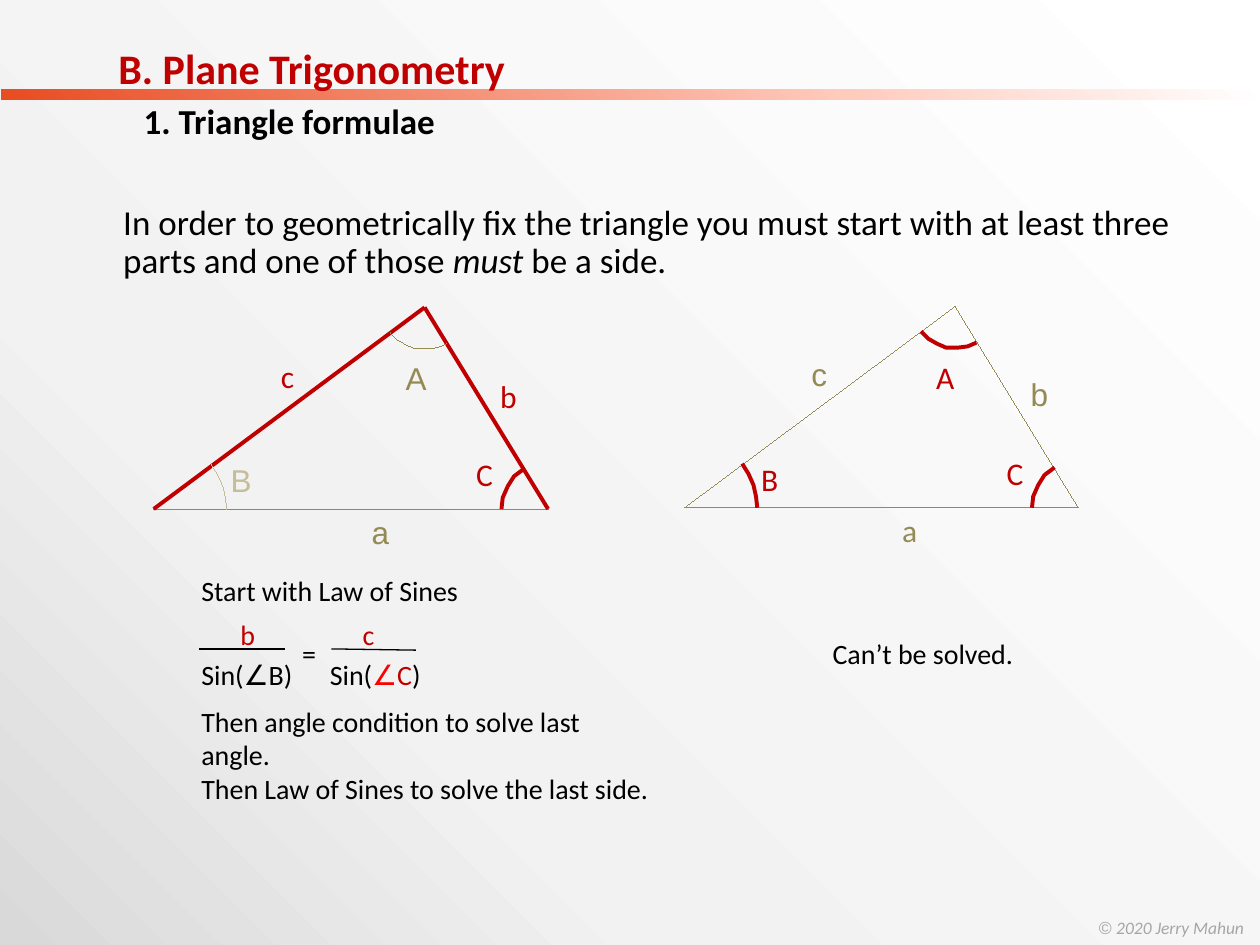
from pptx import Presentation
from pptx import util as u
from pptx.dml.color import RGBColor
from pptx.enum import shapes, text
from pptx.oxml import parse_xml
from pptx.oxml.ns import nsdecls, qn

THEME = {
    "red": "C00000", "bright": "FF0000", "black": "000000", "olive": "948A54",
    "pale": "C4BD97", "gray": "A6A6A6",
    "main": "Calibri", "alt": "Arial",
    "title": 24, "body": 20, "label": 18, "note": 16, "footer": 10,
    "bold_line": 2.25, "rule": 0.75, "hairline": 0,
}
BACKGROUND = [(0, "FFFFFF"), (70, "F2F2F2"), (100, "D9D9D9")]
BAR = [(0, "FFFFFF"), (33, "FFCBBD"), (100, "E84C22")]

# Paragraphs are lists of runs: (words, format changes)
TITLE = [[("B. Plane Trigonometry", {"size": "title", "color": "red", "bold": True})],
         [("1. Triangle formulae", {"size": "body", "bold": True})]]
INTRO = [[("In order to geometrically fix the triangle you must start with at least "
           "three parts and one of those ", {"size": "body"}),
          ("must", {"size": "body", "italic": True}),
          (" be a side.", {"size": "body"})]]
FOOTER = [[("© ", {"size": "footer", "color": "gray", "font": "alt", "italic": True}),
           ("2020 Jerry Mahun", {"size": "footer", "color": "gray", "italic": True})]]

# Notes and formula parts: box, wrap, tab stop, paragraphs
NOTES = [
    ((6.51, 5, 1.81, 0.37), False, None, [[("Can’t be solved.", {})]]),
    ((1.5, 4.5, 2.48, 0.37), False, None, [[("Start with Law of Sines", {})]]),
    ((1.5, 5.54, 3.78, 1.18), True, None, [
        [("Then angle condition to solve last angle.", {})],
        [("Then Law of Sines to solve the last side.", {})]]),
    ((1.5, 5.17, 2.13, 0.37), True, 1.02, [[
        ("Sin(∠B)\tSin(", {}), ("∠", {"color": "bright"}), ("C", {"color": "red"}),
        (")", {})]]),
    ((2.3, 5, 0.33, 0.37), False, None, [[("=", {})]]),
    ((1.81, 4.85, 1.51, 0.37), True, 0.97, [[("b\tc", {"color": "red"})]]),
]
FRACTION_BARS = [((1.58, 5.15), (2.26, 5.15)), ((2.63, 5.15), (3.3, 5.16))]

# One triangle's geometry, drawn twice at different offsets
LEFT, APEX, RIGHT = (1.22, 4.04), (3.37, 2.44), (4.35, 4.04)
SIDES = {"a": (LEFT, RIGHT), "c": (LEFT, APEX), "b": (APEX, RIGHT)}
ARCS = {
    "A": [(3.1, 2.64), (3.16, 2.7), (3.23, 2.74), (3.3, 2.77), (3.39, 2.77),
          (3.47, 2.76), (3.54, 2.73)],
    "B": [(1.8, 4.04), (1.79, 3.95), (1.77, 3.86), (1.73, 3.77), (1.68, 3.69)],
    "C": [(4.16, 3.72), (4.08, 3.78), (4.03, 3.86), (3.99, 3.95), (3.98, 4.04)],
}
LABELS = {"a": (2.95, 4.07), "b": (3.97, 2.99), "c": (2.23, 2.83),
          "A": (3.22, 2.85), "B": (1.83, 3.66), "C": (3.78, 3.61)}
TRIANGLES = [  # offset, known parts, colours of other parts, labels in the main font
    {"offset": (0, 0), "known": "bcC", "faint": {"B": "pale"}, "main": "bcC"},
    {"offset": (4.21, -0.01), "known": "ABC", "faint": {}, "main": "aABC"},
]


def rgb(name):
    return RGBColor.from_string(THEME[name])


def inches(values):
    return [u.Inches(v) for v in values]


def gradient(fill, element, stops):
    fill.gradient()
    fill.gradient_angle = 225
    gs_list = element.find(".//" + qn("a:gsLst"))
    for old in list(gs_list):
        gs_list.remove(old)
    for pos, color in stops:
        gs_list.append(parse_xml(
            f'<a:gs {nsdecls("a")} pos="{pos * 1000}"><a:srgbClr val="{color}"/></a:gs>'))


def write(tf, paragraphs):
    for i, runs in enumerate(paragraphs):
        p = tf.paragraphs[0] if i == 0 else tf.add_paragraph()
        p.alignment = text.PP_ALIGN.LEFT
        for words, changes in runs:
            f = {"size": "note", "color": "black", "font": "main", **changes}
            r = p.add_run()
            r.text = words
            r.font.color.rgb = rgb(f["color"])
            values = {"name": THEME[f["font"]], "size": u.Pt(THEME[f["size"]]),
                      "bold": f.get("bold", False), "italic": f.get("italic", False)}
            for key, value in values.items():
                setattr(r.font, key, value)


def add_text(s, box, paragraphs, wrap=False, inset=True):
    tf = s.shapes.add_textbox(*inches(box)).text_frame
    tf.word_wrap = wrap
    if not inset:
        for side in ("left", "top", "right", "bottom"):
            setattr(tf, f"margin_{side}", 0)
    write(tf, paragraphs)
    return tf


def add_tab_stop(p, pos):
    p._p.get_or_add_pPr().append(parse_xml(
        f'<a:tabLst {nsdecls("a")}><a:tab pos="{u.Inches(pos)}" algn="l"/></a:tabLst>'))


def style_line(sp, color, width):
    sp.line.color.rgb = rgb(color)
    # A zero width must be written out, or the shape style's width applies
    sp._element.spPr.find(qn("a:ln")).set("w", str(u.Pt(THEME[width])))


def add_line(s, start, end, color, width):
    line = s.shapes.add_connector(shapes.MSO_CONNECTOR.STRAIGHT, *inches(start + end))
    style_line(line, color, width)
    line._element.spPr.append(parse_xml(f'<a:effectLst {nsdecls("a")}/>'))


def add_arc(s, points, color, width):
    first, *rest = [inches(point) for point in points]
    builder = s.shapes.build_freeform(*first)
    builder.add_line_segments(rest, close=False)
    sp = builder.convert_to_shape()
    sp.shadow.inherit = False
    sp.fill.background()
    style_line(sp, color, width)


def add_triangle(s, tri):
    dx, dy = tri["offset"]

    def move(point):
        return point[0] + dx, point[1] + dy

    def look(part):
        if part in tri["known"]:
            return "red", "bold_line"
        return tri["faint"].get(part, "olive"), "hairline"

    for part, (start, end) in SIDES.items():
        add_line(s, move(start), move(end), *look(part))
    for part, points in ARCS.items():
        add_arc(s, [move(point) for point in points], *look(part))
    for part, point in LABELS.items():
        font = "main" if part in tri["main"] else "alt"
        run = (part, {"size": "label", "color": look(part)[0], "font": font})
        add_text(s, move(point) + (0.13, 0.3), [[run]], inset=False)


def main():
    prs = Presentation()
    prs.slide_width, prs.slide_height = inches((10, 7.5))
    s = prs.slides.add_slide(prs.slide_layouts[5])

    # Background, bar and footer
    gradient(s.background.fill, s._element, BACKGROUND)
    bar = s.shapes.add_shape(shapes.MSO_SHAPE.RECTANGLE, *inches((0.01, 0.71, 10, 0.08)))
    bar.shadow.inherit = False
    bar.line.fill.background()
    gradient(bar.fill, bar._element, BAR)
    add_text(s, (8.62, 7.23, 1.38, 0.27), FOOTER)

    # Title and subtitle, in front of the bar
    title = s.shapes.title
    title.left, title.top, title.width, title.height = inches((0.84, 0.29, 4.81, 1.18))
    s.shapes._spTree.append(title._element)
    tf = title.text_frame
    tf.auto_size = text.MSO_AUTO_SIZE.NONE
    tf.vertical_anchor = text.MSO_ANCHOR.TOP
    write(tf, TITLE)
    for p, space in zip(tf.paragraphs, (7.5, 3.8)):
        p.space_before = u.Pt(space)
    tf.paragraphs[1]._p.get_or_add_pPr().set("marL", str(u.Inches(0.2)))

    # Introduction
    intro = add_text(s, (0.88, 1.58, 8.93, 0.8), INTRO, wrap=True)
    intro.paragraphs[0].line_spacing = 0.9

    # Triangles
    for tri in TRIANGLES:
        add_triangle(s, tri)

    # Solution notes and the law of sines
    for box, wrap, tab, paragraphs in NOTES:
        tf = add_text(s, box, paragraphs, wrap)
        if tab:
            add_tab_stop(tf.paragraphs[0], tab)
    for start, end in FRACTION_BARS:
        add_line(s, start, end, "black", "rule")

    prs.save("out.pptx")


if __name__ == "__main__":
    main()
